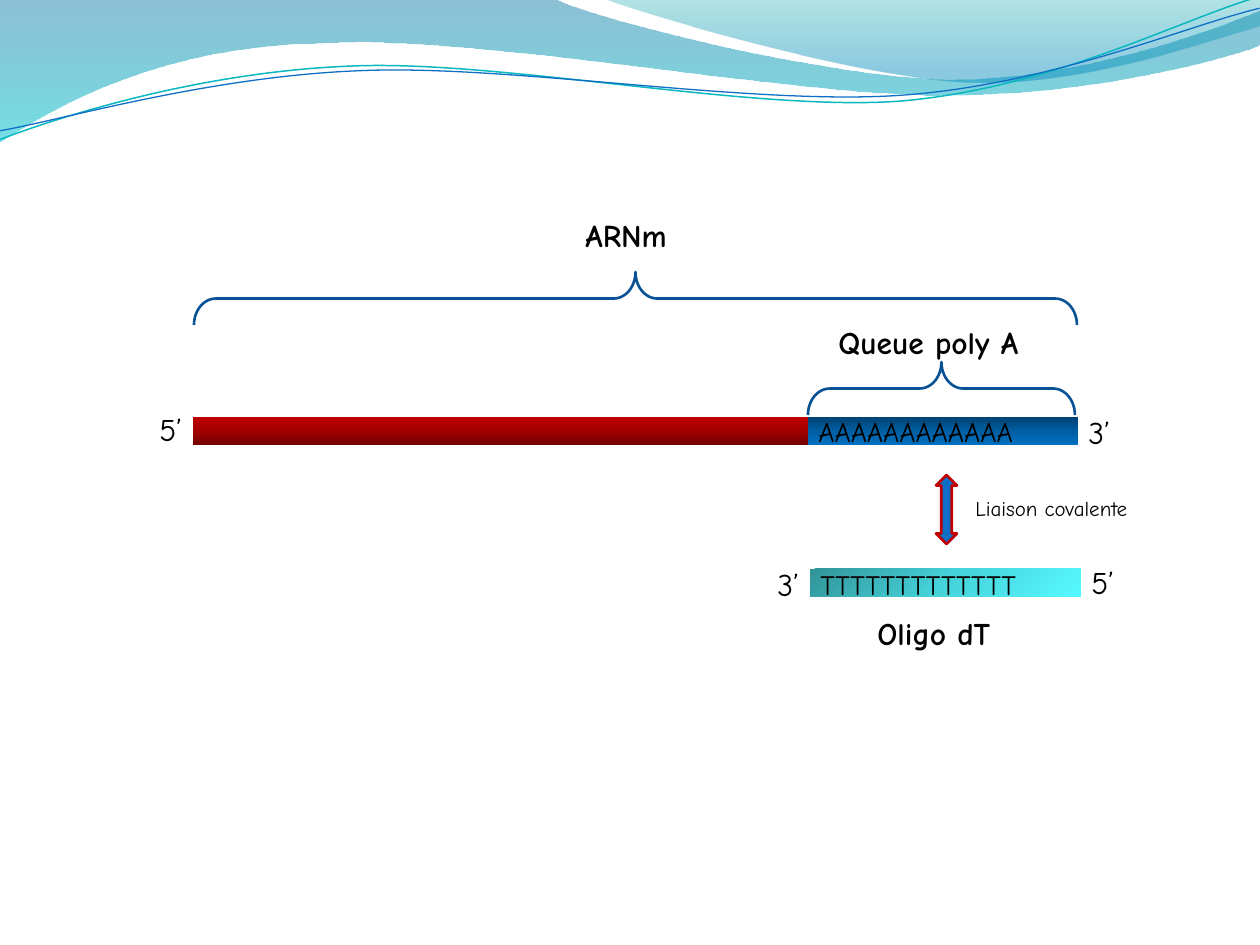
from dataclasses import dataclass

from lxml import etree
from pptx import Presentation
from pptx import util as u
from pptx.dml.color import RGBColor
from pptx.enum import shapes, text
from pptx.oxml.ns import qn

PX = 914400 / 126


@dataclass(frozen=True)
class Theme:
    font: str = "Comic Neue"
    label_size: int = 18
    bases_size: int = 16
    note_size: int = 12
    ink: str = "000000"
    brace: str = "095295"
    arrow_fill: str = "0F6FC6"
    arrow_line: str = "C00000"
    wave_teal: str = "0AB8BF"
    wave_blue: str = "0F6FC6"
    # Gradient stops: position, colour, opacity (position and opacity in percent)
    band_back: tuple = ((0, "0074A1", 45), (100, "00C6CF", 55))
    band_front: tuple = ((0, "00A1A9", 30), (80, "008BBF", 45))
    messenger: tuple = ((0, "720000", 100), (50, "A20000", 100), (100, "C00000", 100))
    poly_a: tuple = ((0, "004272", 100), (50, "005EA2", 100), (100, "0070C0", 100))
    oligo: tuple = ((0, "319499", 100), (50, "46D3DA", 100), (100, "56F8FF", 100))


def px(length):
    return u.Emu(round(length * PX))


class Painter:
    def __init__(self, slide, theme):
        self.slide = slide
        self.theme = theme

    def finish(self, shape, fill=None, line=None, width=1.5):
        shape.shadow.inherit = False
        if fill:
            shape.fill.solid()
            shape.fill.fore_color.rgb = RGBColor.from_string(fill)
        else:
            shape.fill.background()
        if line:
            shape.line.color.rgb = RGBColor.from_string(line)
            shape.line.width = u.Pt(width)
        else:
            shape.line.fill.background()

    def gradient(self, shape, stops, angle):
        """Fill with a linear gradient; the angle runs clockwise in degrees."""
        self.finish(shape)
        gradient = etree.Element(qn("a:gradFill"), rotWithShape="1")
        stop_list = etree.SubElement(gradient, qn("a:gsLst"))
        for position, colour, opacity in stops:
            stop = etree.SubElement(stop_list, qn("a:gs"), pos=str(position * 1000))
            rgb = etree.SubElement(stop, qn("a:srgbClr"), val=colour)
            if opacity < 100:
                etree.SubElement(rgb, qn("a:alpha"), val=str(opacity * 1000))
        etree.SubElement(gradient, qn("a:lin"), ang=str(angle * 60000), scaled="0")
        properties = shape.element.spPr
        properties.replace(properties.find(qn("a:noFill")), gradient)

    def freeform(self, start, segments, close):
        """Draw segments of one point (line) or three points (Bézier curve)."""
        builder = self.slide.shapes.build_freeform(px(start[0]), px(start[1]), scale=1.0)
        points = [(px(x), px(y)) for segment in segments for x, y in segment]
        builder.add_line_segments(points, close=close)
        shape = builder.convert_to_shape()
        lines = iter(list(shape.element.iter(qn("a:lnTo"))))
        for segment in segments:
            pieces = [next(lines) for _ in segment]
            if len(pieces) == 3:
                curve = etree.Element(qn("a:cubicBezTo"))
                pieces[0].addprevious(curve)
                for piece in pieces:
                    curve.append(piece[0])
                    piece.getparent().remove(piece)
        return shape

    def band(self, start, segments, stops):
        self.gradient(self.freeform(start, segments, True), stops, 90)

    def wave(self, start, segments, colour, width):
        shape = self.freeform(start, segments, False)
        shape.rotation = 357.3
        self.finish(shape, line=colour, width=width)

    def preset(self, kind, left, top, width, height):
        return self.slide.shapes.add_shape(kind, px(left), px(top), px(width), px(height))

    def strand(self, left, top, width, height, stops, angle):
        shape = self.preset(shapes.MSO_SHAPE.RECTANGLE, left, top, width, height)
        self.gradient(shape, stops, angle)

    def brace(self, left, top, width, height):
        """Place a brace that points up, given the box it covers once turned."""
        shift = (width - height) / 2
        shape = self.preset(shapes.MSO_SHAPE.RIGHT_BRACE,
                            left + shift, top - shift, height, width)
        shape.rotation = 270
        shape.adjustments[0] = 0.41
        self.finish(shape, line=self.theme.brace)

    def double_arrow(self, left, top, width, height):
        shape = self.preset(shapes.MSO_SHAPE.UP_DOWN_ARROW, left, top, width, height)
        self.finish(shape, self.theme.arrow_fill, self.theme.arrow_line)

    def label(self, wording, left, top, width, height=50, size=None, bold=False):
        box = self.slide.shapes.add_textbox(px(left), px(top), px(width), px(height))
        frame = box.text_frame
        frame.text = wording
        frame.word_wrap = False
        frame.auto_size = text.MSO_AUTO_SIZE.SHAPE_TO_FIT_TEXT
        font = frame.paragraphs[0].runs[0].font
        font.name = self.theme.font
        font.size = u.Pt(size or self.theme.label_size)
        font.bold = bold
        font.color.rgb = RGBColor.from_string(self.theme.ink)


def draw_header(painter):
    theme = painter.theme
    painter.band((0, 0), [
        [(554, -1)],
        [(600, 21), (837, 79), (955, 79)],
        [(1075, 79), (1207, 33), (1260, 11)],
        [(1261, 45)],
        [(1239, 55), (1096, 96), (940, 95)],
        [(784, 95), (481, 35), (324, 43)],
        [(163, 45), (58, 105), (-1, 142)],
        [(0, 0)],
    ], theme.band_back)
    painter.band((604, -1), [
        [(641, 14), (859, 78), (969, 82)],
        [(1079, 87), (1211, 40), (1260, 26)],
        [(1260, 0)],
        [(604, -1)],
    ], theme.band_front)
    painter.wave((-3, 110), [
        [(58, 90), (199, 52), (350, 53)],
        [(499, 53), (745, 117), (896, 114)],
        [(1049, 109), (1184, 45), (1260, 27)],
    ], theme.wave_teal, 0.85)
    painter.wave((-2, 101), [
        [(57, 94), (207, 57), (358, 58)],
        [(509, 58), (750, 112), (902, 108)],
        [(1052, 104), (1188, 52), (1262, 38)],
    ], theme.wave_blue, 0.75)


def draw_hybridisation(painter):
    theme = painter.theme
    painter.strand(193, 417, 615, 28, theme.messenger, 270)
    painter.strand(808, 417, 270, 28, theme.poly_a, 90)
    painter.brace(194, 272, 883, 53)
    painter.label("ARNm", 573, 210, 118, bold=True)
    painter.brace(808, 362, 267, 53)
    painter.label("AAAAAAAAAAAA", 806, 408, 275, 47, theme.bases_size)
    painter.label("5’", 147, 404, 50)
    painter.label("3’", 1076, 407, 50)
    painter.label("Queue poly A", 826, 317, 233, bold=True)

    painter.strand(810, 569, 271, 28, theme.oligo, 45)
    painter.label("TTTTTTTTTTTTT", 808, 561, 275, 47, theme.bases_size)
    painter.label("5’", 1079, 557, 50)
    painter.label("3’", 765, 559, 50)
    painter.label("Oligo dT", 865, 608, 156, bold=True)

    painter.double_arrow(936, 475, 21, 69)
    painter.label("Liaison covalente", 963, 489, 192, 38, theme.note_size)


def main():
    presentation = Presentation()
    presentation.slide_width = px(1260)
    presentation.slide_height = px(945)
    slide = presentation.slides.add_slide(presentation.slide_layouts[6])
    painter = Painter(slide, Theme())
    draw_header(painter)
    draw_hybridisation(painter)
    presentation.save("out.pptx")


if __name__ == "__main__":
    main()
